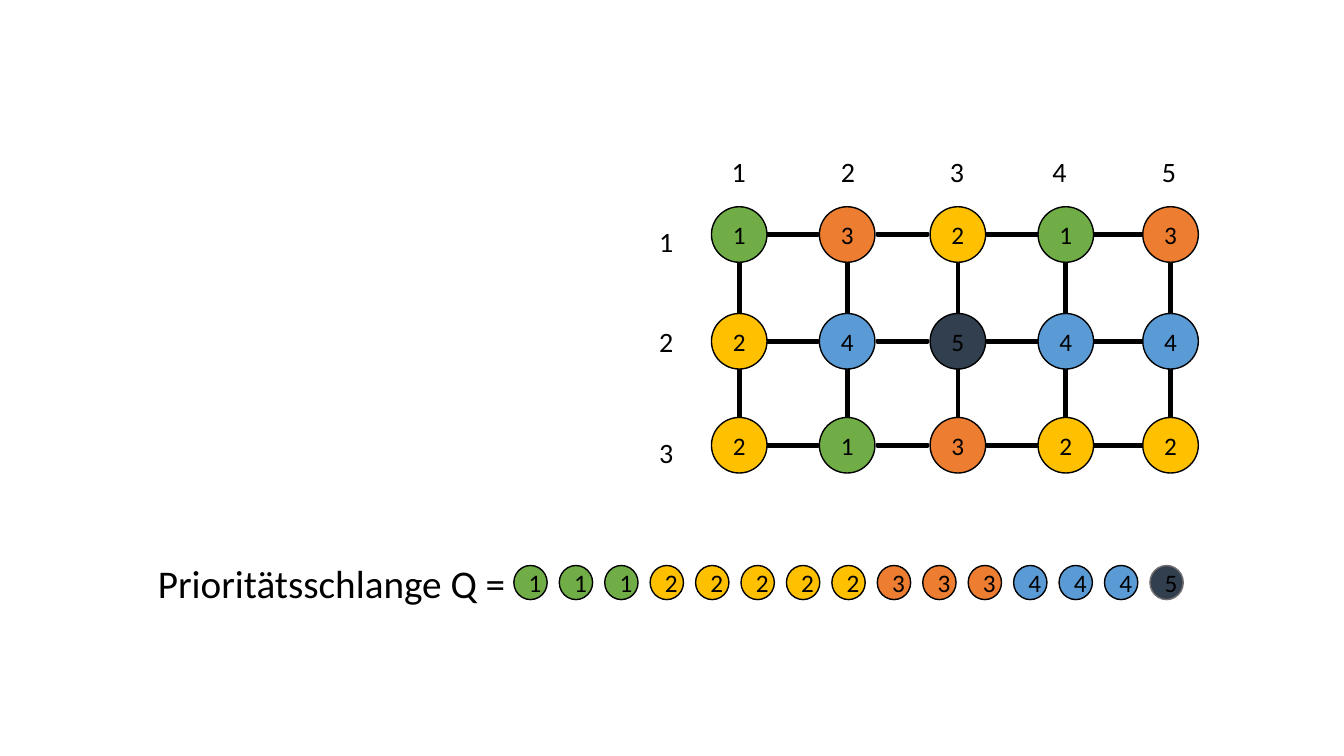
from itertools import chain

from lxml import etree
from pptx import Presentation
from pptx.dml.color import RGBColor
from pptx.enum.shapes import MSO_SHAPE
from pptx.enum.text import MSO_ANCHOR, PP_ALIGN
from pptx.oxml.ns import qn
from pptx.util import Cm, Pt

ELLIPSE = MSO_SHAPE.OVAL
MINUS = MSO_SHAPE.MATH_MINUS
CENTER = PP_ALIGN.CENTER
LEFT = PP_ALIGN.LEFT
TOP = MSO_ANCHOR.TOP
MIDDLE = MSO_ANCHOR.MIDDLE

BLACK = "000000"
QUEUE_END_LINE = "757070"
PRIORITY_COLORS = {1: "70AD47", 2: "FFC000", 3: "ED7D31", 4: "5B9BD5", 5: "323F4F"}
PRIORITIES = [[1, 3, 2, 1, 3], [2, 4, 5, 4, 4], [2, 1, 3, 2, 2]]

NODE_SIZE = 1.4
NODE_COLUMNS = [1.9, 4.62, 7.41, 10.13, 12.77]
NODE_ROWS = [1.43, 4.12, 6.74]
EDGE_LENGTH, EDGE_THICKNESS = 1.75, 0.36
ROW_LABEL_TOPS = [1.76, 4.27, 7.07]
COLUMN_LABEL_TABS = [2.75, 5.5, 8.08, 10.84]
QUEUE_NODE_WIDTH = 0.84


def color(hex_value):
    return RGBColor.from_string(hex_value)


def set_text(shape, text, size, alignment=LEFT, anchor=TOP, margin_left=0.25):
    frame = shape.text_frame
    frame_format = {"word_wrap": True, "vertical_anchor": anchor, "margin_left": Cm(margin_left)}
    for name, value in frame_format.items():
        setattr(frame, name, value)
    paragraph = frame.paragraphs[0]
    paragraph.alignment = alignment
    run = paragraph.add_run()
    run.text = text
    for name, value in {"name": "Calibri", "size": Pt(size)}.items():
        setattr(run.font, name, value)
    run.font.color.rgb = color(BLACK)
    return paragraph


def add_label(slide, box, text, size, margin_left=0.25):
    shape = slide.shapes.add_textbox(*map(Cm, box))
    return set_text(shape, text, size, margin_left=margin_left)


def add_figure(slide, kind, box, fill, line=BLACK):
    shape = slide.shapes.add_shape(kind, *map(Cm, box))
    shape.shadow.inherit = False
    shape.fill.solid()
    shape.fill.fore_color.rgb = color(fill)
    shape.line.color.rgb = color(line)
    shape.line.width = Pt(1)
    return shape


def add_node(slide, box, priority, line=BLACK):
    node = add_figure(slide, ELLIPSE, box, PRIORITY_COLORS[priority], line)
    set_text(node, str(priority), 18, CENTER, MIDDLE)


def add_edge(slide, center_x, center_y, rotation):
    box = (center_x - EDGE_LENGTH / 2, center_y - EDGE_THICKNESS / 2, EDGE_LENGTH, EDGE_THICKNESS)
    edge = add_figure(slide, MINUS, box, BLACK)
    edge.rotation = rotation


def add_tab_stops(paragraph, positions):
    properties = paragraph._p.get_or_add_pPr()
    tab_list = etree.SubElement(properties, qn("a:tabLst"))
    for position in positions:
        etree.SubElement(tab_list, qn("a:tab"), pos=str(Cm(position)), algn="l")


def add_grid_labels(slide, left, top):
    for number, offset in enumerate(ROW_LABEL_TOPS, 1):
        add_label(slide, (left, top + offset, 1.4, 1.12), str(number), 20, margin_left=0.58)
    column_numbers = "\t".join(str(number) for number in range(1, len(NODE_COLUMNS) + 1))
    paragraph = add_label(slide, (left + 2.16, top, 11.96, 1.12), column_numbers, 20)
    add_tab_stops(paragraph, COLUMN_LABEL_TABS)


def add_grid(slide, left, top):
    centers_x = [left + offset + NODE_SIZE / 2 for offset in NODE_COLUMNS]
    centers_y = [top + offset + NODE_SIZE / 2 for offset in NODE_ROWS]
    for center_y in centers_y:
        for start, end in zip(centers_x, centers_x[1:]):
            add_edge(slide, (start + end) / 2, center_y, 0)
    for start, end in zip(centers_y, centers_y[1:]):
        for center_x in centers_x:
            add_edge(slide, center_x, (start + end) / 2, 90)
    for row_top, priorities in zip(NODE_ROWS, PRIORITIES):
        for column_left, priority in zip(NODE_COLUMNS, priorities):
            add_node(slide, (left + column_left, top + row_top, NODE_SIZE, NODE_SIZE), priority)
    add_grid_labels(slide, left, top)


def add_queue(slide, left, top, width):
    add_label(slide, (left, top, 9.37, 1.45), "Prioritätsschlange Q =", 28)
    queue = sorted(chain.from_iterable(PRIORITIES))
    first_left = left + 9.22
    step = (left + width - QUEUE_NODE_WIDTH - first_left) / (len(queue) - 1)
    for index, priority in enumerate(queue):
        box = (first_left + index * step, top + 0.28, QUEUE_NODE_WIDTH, 0.86)
        add_node(slide, box, priority, QUEUE_END_LINE if priority == 5 else BLACK)


def main():
    presentation = Presentation()
    presentation.slide_width = Cm(33.87)
    presentation.slide_height = Cm(19.05)
    slide = presentation.slides.add_slide(presentation.slide_layouts[6])
    add_grid(slide, 16.03, 3.78)
    add_queue(slide, 3.73, 13.97, 26.09)
    presentation.save("out.pptx")


if __name__ == "__main__":
    main()
